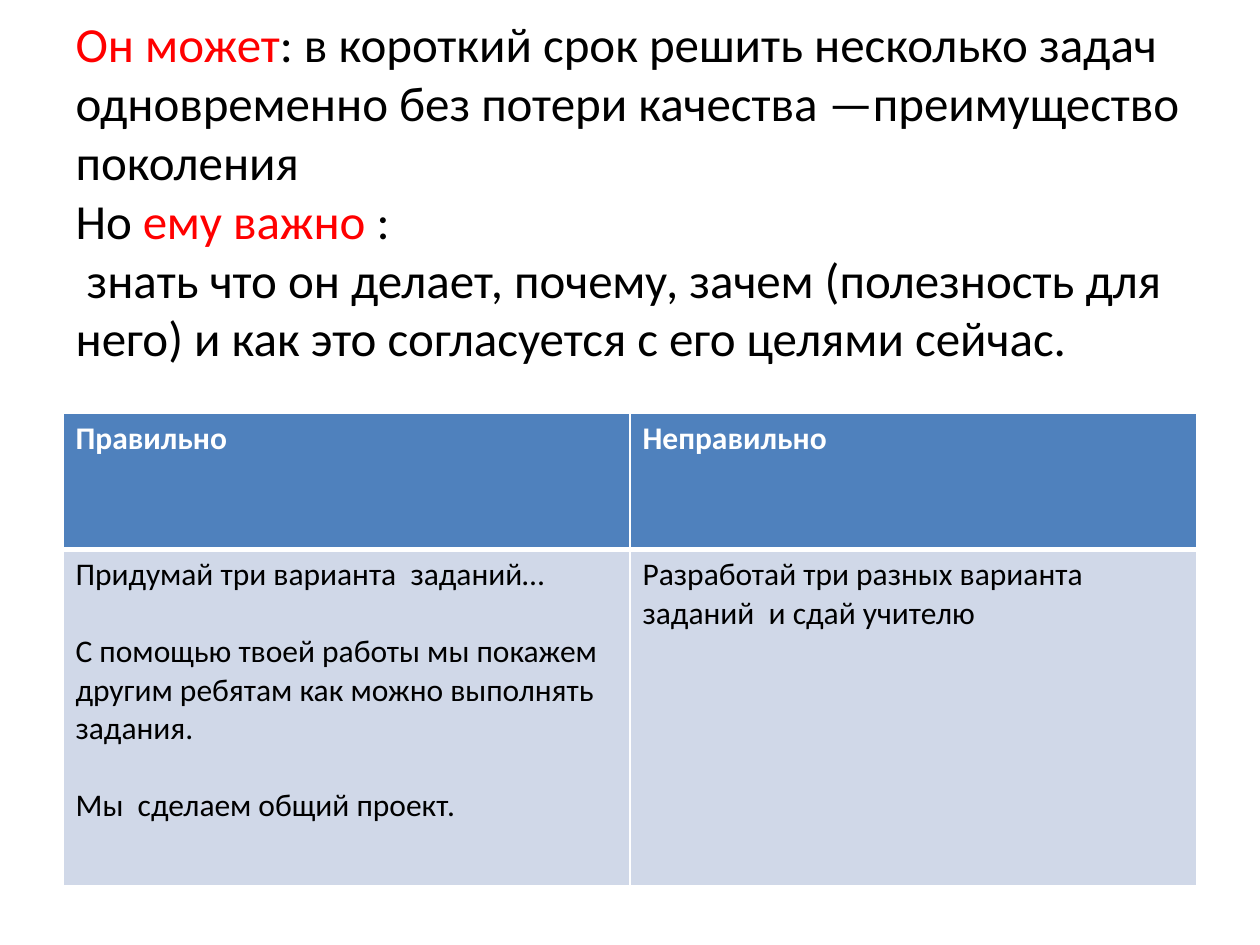
from lxml.etree import SubElement
from pptx import Presentation
from pptx.dml.color import RGBColor
from pptx.enum.text import MSO_ANCHOR, MSO_AUTO_SIZE, PP_ALIGN
from pptx.oxml.ns import qn
from pptx.util import Inches, Pt

FONT = "Calibri"
BLACK, WHITE, RED = "000000", "FFFFFF", "FF0000"
HEADER_FILL, BODY_FILL = "4F81BD", "D0D8E8"
MARGIN, CONTENT_WIDTH = 0.5, 9
TITLE_TOP, TITLE_HEIGHT = 0.21, 3.07
ROW_HEIGHTS = [1.08, 2.67]
LINE_GAP = 22

# Each title line is a list of (text, colour) pieces
TITLE_LINES = [
    [("Он может", RED),
     (": в короткий срок решить несколько задач одновременно "
      "без потери качества —преимущество поколения", BLACK)],
    [("Но ", BLACK), ("ему важно ", RED), (":", BLACK)],
    [(" знать что он делает, почему, зачем (полезность для него) "
      "и как это согласуется с его целями сейчас.", BLACK)],
]

# Each cell is a list of paragraphs
TABLE_ROWS = [
    [["Правильно"], ["Неправильно"]],
    [["Придумай три варианта  заданий…",
      "С помощью твоей работы мы покажем другим ребятам "
      "как можно выполнять  задания.",
      "Мы  сделаем общий проект."],
     ["Разработай три разных варианта заданий  и сдай учителю"]],
]


def color(value):
    return RGBColor.from_string(value)


def format_run(run, size, font_color, bold=False):
    run.font.name = FONT
    run.font.size = Pt(size)
    run.font.bold = bold
    run.font.color.rgb = color(font_color)


def fill_title(title):
    title.left, title.top = Inches(MARGIN), Inches(TITLE_TOP)
    title.width, title.height = Inches(CONTENT_WIDTH), Inches(TITLE_HEIGHT)
    text_frame = title.text_frame
    text_frame.word_wrap = True
    text_frame.auto_size = MSO_AUTO_SIZE.NONE
    text_frame.vertical_anchor = MSO_ANCHOR.MIDDLE
    text_frame.margin_bottom = Inches(0.52)
    paragraph = text_frame.paragraphs[0]
    paragraph.alignment = PP_ALIGN.LEFT
    for index, pieces in enumerate(TITLE_LINES):
        if index:
            paragraph.add_line_break()
        for text, font_color in pieces:
            run = paragraph.add_run()
            run.text = text
            format_run(run, 28, font_color)


def set_borders(cell, widths):
    """Put white borders before the fill, as the schema orders them."""
    properties = cell._tc.get_or_add_tcPr()
    for position, (side, width) in enumerate(widths.items()):
        line = SubElement(properties, qn(f"a:ln{side}"), w=str(Pt(width)))
        solid = SubElement(line, qn("a:solidFill"))
        SubElement(solid, qn("a:srgbClr"), val=WHITE)
        properties.insert(position, line)


def fill_cell(cell, paragraphs, is_header):
    cell.fill.solid()
    cell.fill.fore_color.rgb = color(HEADER_FILL if is_header else BODY_FILL)
    cell.text_frame.text = "\n".join(paragraphs)
    for index, paragraph in enumerate(cell.text_frame.paragraphs):
        paragraph.space_before = Pt(LINE_GAP if index else 0)
        for run in paragraph.runs:
            format_run(run, 18, WHITE if is_header else BLACK, is_header)
    # A thick rule parts the header from the body
    set_borders(cell, {"L": 1, "R": 1, "T": 1 if is_header else 3,
                       "B": 3 if is_header else 1})


def add_comparison_table(slide):
    column_count = len(TABLE_ROWS[0])
    table = slide.shapes.add_table(
        len(TABLE_ROWS), column_count,
        Inches(MARGIN), Inches(TITLE_TOP + TITLE_HEIGHT),
        Inches(CONTENT_WIDTH), Inches(sum(ROW_HEIGHTS))).table
    for column in table.columns:
        column.width = Inches(CONTENT_WIDTH / column_count)
    for row_index, row in enumerate(TABLE_ROWS):
        table.rows[row_index].height = Inches(ROW_HEIGHTS[row_index])
        for column_index, paragraphs in enumerate(row):
            fill_cell(table.cell(row_index, column_index), paragraphs,
                      is_header=row_index == 0)


def main():
    presentation = Presentation()
    presentation.slide_width = Inches(10)
    presentation.slide_height = Inches(7.5)
    slide = presentation.slides.add_slide(presentation.slide_layouts[5])
    fill_title(slide.shapes.title)
    add_comparison_table(slide)
    presentation.save("out.pptx")


if __name__ == "__main__":
    main()
